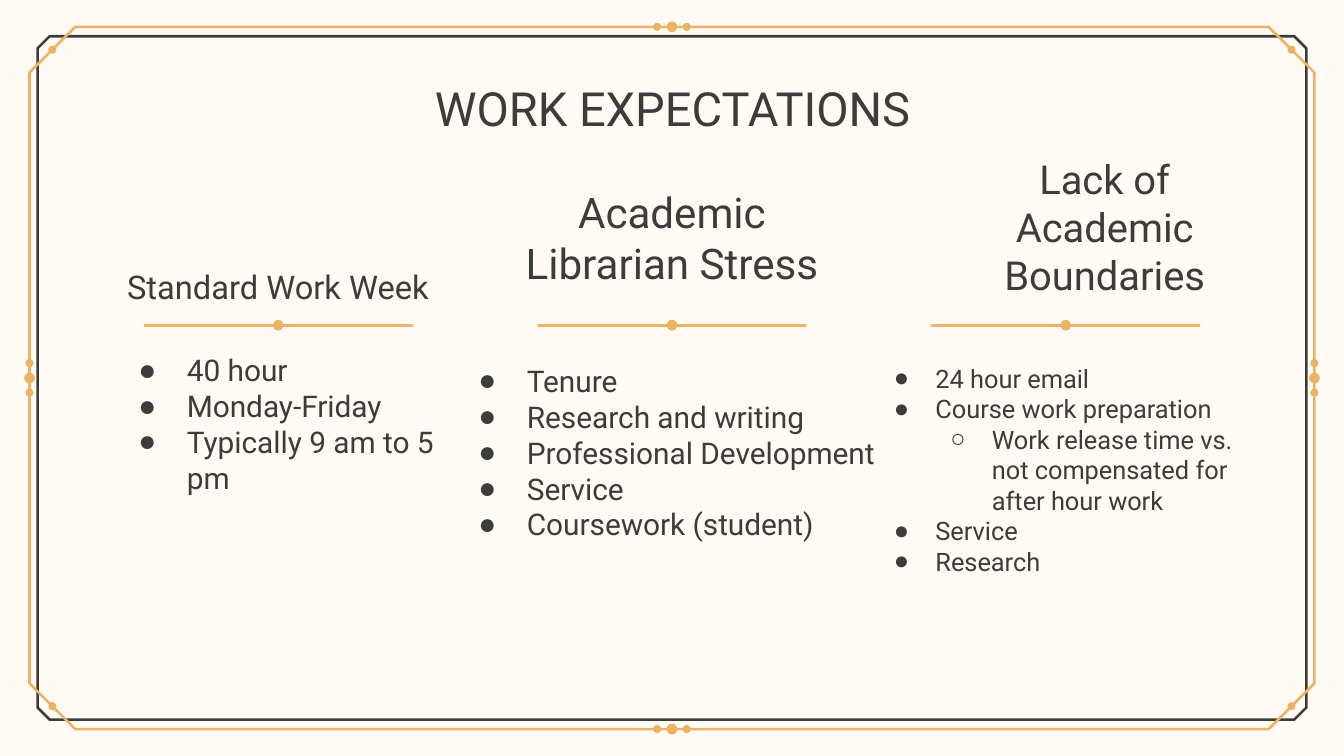
import pptx
import pptx.dml.color
import pptx.enum.shapes
import pptx.enum.text
import pptx.oxml
import pptx.oxml.ns
import pptx.util
from lxml import etree

Inches = pptx.util.Inches
Pt = pptx.util.Pt
RGBColor = pptx.dml.color.RGBColor
ANCHOR = pptx.enum.text.MSO_ANCHOR
ALIGN = pptx.enum.text.PP_ALIGN
qn = pptx.oxml.ns.qn

CREAM = RGBColor(0xFF, 0xFB, 0xF4)
GOLD = RGBColor(0xEC, 0xB2, 0x66)
DARK = RGBColor(0x3C, 0x3C, 0x3B)
FONT = "Roboto"

SLIDE_WIDTH = 10
SLIDE_HEIGHT = SLIDE_WIDTH * 9 / 16
RULE_Y = 2.42
RULE_LENGTH = 2
LARGE_DOT, SMALL_DOT = 0.08, 0.06

# Heading: text, size, box
HEADINGS = [
    ("Standard Work Week", 17.5, (0.79, 1.89, 2.56, 0.49)),
    ("Academic Librarian Stress", 22.6, (3.72, 1.26, 2.56, 0.98)),
    ("Lack of Academic Boundaries", 21.4, (6.97, 1.4, 2.5, 0.92)),
]

# List: placeholder index, box, size, indent step, hanging, items as (level, text)
LISTS = [
    (1, (0.79, 2.52, 2.56, 1.79), 16, 0.5, 0.36,
     [(0, "40 hour"), (0, "Monday-Friday"), (0, "Typically 9 am to 5 pm")]),
    (2, (3.32, 2.6, 3.35, 2.58), 16, 0.5, 0.36,
     [(0, "Tenure"), (0, "Research and writing"),
      (0, "Professional Development"), (0, "Service"),
      (0, "Coursework (student)")]),
    (4, (6.44, 2.6, 2.99, 1.79), 13.6, 0.42, 0.31,
     [(0, "24 hour email"), (0, "Course work preparation"),
      (1, "Work release time vs. not compensated for after hour work"),
      (0, "Service"), (0, "Research")]),
]
BULLETS = "●○"


def set_values(target, values):
    for name, value in values.items():
        setattr(target, name, value)


def place(shape, box):
    names = ("left", "top", "width", "height")
    set_values(shape, dict(zip(names, map(Inches, box))))


def format_frame(frame, anchor):
    set_values(frame, {
        "word_wrap": True,
        "auto_size": pptx.enum.text.MSO_AUTO_SIZE.NONE,
        "vertical_anchor": anchor,
        "margin_left": Inches(0.1), "margin_right": Inches(0.1),
        "margin_top": Inches(0.1), "margin_bottom": Inches(0.1),
    })


def write(para, text, size, align):
    set_values(para, {"alignment": align, "space_before": Pt(0), "line_spacing": 1.0})
    span = para.add_run()
    span.text = text
    set_values(span.font, {"name": FONT, "size": Pt(size), "bold": False})
    span.font.color.rgb = DARK


def add_dot(slide, x, y, size):
    dot = slide.shapes.add_shape(
        pptx.enum.shapes.MSO_SHAPE.OVAL,
        Inches(x - size / 2), Inches(y - size / 2), Inches(size), Inches(size))
    dot.shadow.inherit = False
    dot.fill.solid()
    dot.fill.fore_color.rgb = GOLD
    dot.line.fill.background()


def add_cut_frame(slide, margin_x, margin_y, cut, color):
    """Outline of a rectangle with its corners cut at 45 degrees."""
    left, right = margin_x, SLIDE_WIDTH - margin_x
    top, bottom = margin_y, SLIDE_HEIGHT - margin_y
    points = [
        (left + cut, top), (right - cut, top), (right, top + cut),
        (right, bottom - cut), (right - cut, bottom), (left + cut, bottom),
        (left, bottom - cut), (left, top + cut),
    ]
    points = [(Inches(x), Inches(y)) for x, y in points]
    builder = slide.shapes.build_freeform(*points[0])
    builder.add_line_segments(points[1:], close=True)
    outline = builder.convert_to_shape()
    outline.shadow.inherit = False
    outline.fill.background()
    outline.line.color.rgb = color
    outline.line.width = Pt(1.4)


def add_border(slide):
    margin_x, margin_y = 0.22, 0.2
    add_cut_frame(slide, 0.28, 0.27, 0.09, DARK)
    add_cut_frame(slide, margin_x, margin_y, 0.34, GOLD)
    # Three dots in the middle of each side
    for offset, size in ((-0.11, SMALL_DOT), (0, LARGE_DOT), (0.11, SMALL_DOT)):
        for y in (margin_y, SLIDE_HEIGHT - margin_y):
            add_dot(slide, SLIDE_WIDTH / 2 + offset, y, size)
        for x in (margin_x, SLIDE_WIDTH - margin_x):
            add_dot(slide, x, SLIDE_HEIGHT / 2 + offset, size)
    # One dot on each cut corner
    for x in (0.39, SLIDE_WIDTH - 0.39):
        for y in (0.37, SLIDE_HEIGHT - 0.37):
            add_dot(slide, x, y, SMALL_DOT)


def add_title(slide, text):
    title = slide.shapes.title
    place(title, (0.79, 0.49, 8.43, 0.63))
    format_frame(title.text_frame, ANCHOR.TOP)
    write(title.text_frame.paragraphs[0], text, 25.2, ALIGN.CENTER)


def add_heading(slide, text, size, box):
    heading = slide.shapes.add_textbox(*map(Inches, box))
    format_frame(heading.text_frame, ANCHOR.BOTTOM)
    write(heading.text_frame.paragraphs[0], text, size, ALIGN.CENTER)


def add_rule(slide, center):
    rule = slide.shapes.add_connector(
        pptx.enum.shapes.MSO_CONNECTOR.STRAIGHT,
        Inches(center - RULE_LENGTH / 2), Inches(RULE_Y),
        Inches(center + RULE_LENGTH / 2), Inches(RULE_Y))
    rule.line.color.rgb = GOLD
    rule.line.width = Pt(1.5)
    etree.SubElement(rule._element.spPr, qn("a:effectLst"))
    add_dot(slide, center, RULE_Y, LARGE_DOT)


def add_bullet(para, level, step, hanging):
    para.level = level
    properties = para._p.get_or_add_pPr()
    properties.set("marL", str(Inches(step * (level + 1))))
    properties.set("indent", str(-Inches(hanging)))
    color = etree.SubElement(properties, qn("a:buClr"))
    etree.SubElement(color, qn("a:srgbClr"), val=str(DARK))
    etree.SubElement(properties, qn("a:buChar"), char=BULLETS[level])


def fill_list(slide, index, box, size, step, hanging, items):
    body = slide.placeholders[index]
    place(body, box)
    frame = body.text_frame
    format_frame(frame, ANCHOR.TOP)
    for number, (level, text) in enumerate(items):
        para = frame.add_paragraph() if number else frame.paragraphs[0]
        add_bullet(para, level, step, hanging)
        write(para, text, size, ALIGN.LEFT)


def main():
    deck = pptx.Presentation()
    deck.slide_width, deck.slide_height = Inches(SLIDE_WIDTH), Inches(SLIDE_HEIGHT)
    page = deck.slides.add_slide(deck.slide_layouts.get_by_name("Comparison"))
    page.background.fill.solid()
    page.background.fill.fore_color.rgb = CREAM

    add_border(page)
    add_title(page, "WORK EXPECTATIONS")

    # Three columns: heading, rule and list
    for column, (heading, bullet_list) in enumerate(zip(HEADINGS, LISTS)):
        add_heading(page, *heading)
        add_rule(page, SLIDE_WIDTH / 2 + (column - 1) * 2.93)
        fill_list(page, *bullet_list)

    # Unused placeholder of the layout
    spare = page.placeholders[3]._element
    spare.getparent().remove(spare)
    deck.save("out.pptx")


if __name__ == "__main__":
    main()
